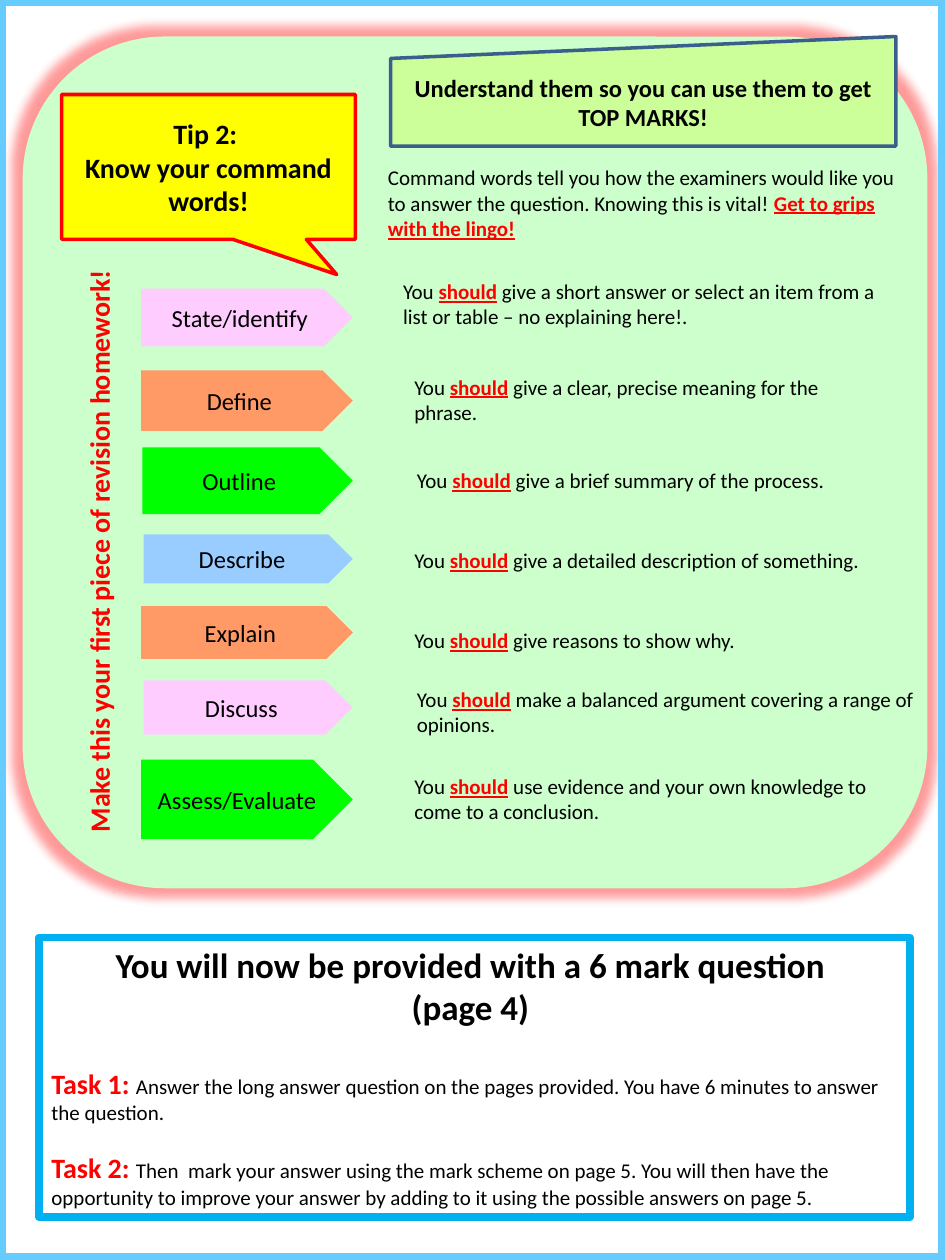
from lxml import etree
from pptx import Presentation
from pptx.dml.color import RGBColor
from pptx.enum import shapes, text
from pptx.oxml import ns
from pptx.util import Inches, Pt

KIND = shapes.MSO_SHAPE
MID, TOP = text.MSO_ANCHOR.MIDDLE, text.MSO_ANCHOR.TOP
LEFT, CENTER = text.PP_ALIGN.LEFT, text.PP_ALIGN.CENTER
BLACK, RED = "000000", "FF0000"

# word, fill, arrow box, meaning, meaning box
WORDS = [
    ("State/identify", "FFCCFF", (1.12, 2.29, 1.68, 0.46),
     "give a short answer or select an item from a list or table – no explaining here!.",
     (3.1, 2.16, 3.95, 0.5)),
    ("Define", "FF9966", (1.12, 2.94, 1.68, 0.48),
     "give a clear, precise meaning for the phrase.", (3.19, 2.92, 3.78, 0.5)),
    ("Outline", "00FF00", (1.13, 3.55, 1.67, 0.53),
     "give a brief summary of the process.", (3.21, 3.66, 3.96, 0.3)),
    ("Describe", "99CCFF", (1.14, 4.24, 1.66, 0.39),
     "give a detailed description of something.", (3.19, 4.3, 4.19, 0.3)),
    ("Explain", "FF9966", (1.12, 4.81, 1.68, 0.42),
     "give reasons to show why.", (3.19, 4.93, 4.19, 0.3)),
    ("Discuss", "FFCCFF", (1.14, 5.4, 1.66, 0.43),
     "make a balanced argument covering a range of opinions.", (3.21, 5.4, 4.19, 0.5)),
    ("Assess/Evaluate", "00FF00", (1.12, 6.03, 1.68, 0.63),
     "use evidence and your own knowledge to come to a conclusion.",
     (3.19, 6.09, 4.19, 0.5)),
]


def rgb(code):
    return RGBColor.from_string(code)


def write(item, paras, align=LEFT, anchor=TOP):
    """Fill item with paragraphs, each a list of (text, size, colour, style) runs.

    The style may hold b for bold and u for underline.
    """
    frame = item.text_frame
    frame.word_wrap = True
    frame.vertical_anchor = anchor
    for i, runs in enumerate(paras):
        para = frame.add_paragraph() if i else frame.paragraphs[0]
        para.alignment = align
        for words, size, color, style in runs:
            run = para.add_run()
            run.text = words
            font = run.font
            font.name, font.size = "Calibri", Pt(size)
            font.color.rgb = rgb(color)
            font.bold = "b" in style
            font.underline = "u" in style


def shape(slide, kind, box, fill=None, line=None, width=2, adj=()):
    item = slide.shapes.add_shape(kind, *map(Inches, box))
    item.shadow.inherit = False
    for i, value in enumerate(adj):
        item.adjustments[i] = value
    if fill:
        item.fill.solid()
        item.fill.fore_color.rgb = rgb(fill)
    else:
        item.fill.background()
    if line:
        item.line.color.rgb = rgb(line)
        item.line.width = Pt(width)
    else:
        item.line.fill.background()
    return item


def label(slide, box, runs, align=LEFT):
    item = slide.shapes.add_textbox(*map(Inches, box))
    write(item, [runs], align)
    return item


def glow(item, color, size, alpha):
    effects = item.element.spPr.find(ns.qn("a:effectLst"))
    halo = etree.SubElement(effects, ns.qn("a:glow"), rad=str(Pt(size)))
    tint = etree.SubElement(halo, ns.qn("a:srgbClr"), val=color)
    etree.SubElement(tint, ns.qn("a:alpha"), val=str(alpha * 1000))


def header(slide):
    tip = shape(slide, KIND.RECTANGULAR_CALLOUT, (0.49, 0.75, 2.33, 1.15),
                "FFFF00", RED, adj=(0.437, 0.743))
    write(tip, [[("Tip 2: ", 16, BLACK, "b")],
                [("Know your command words!", 16, BLACK, "b")]], CENTER, MID)
    label(slide, (2.98, 1.26, 4.31, 0.71), [
        ("Command words tell you how the examiners would like you to answer "
         "the question. Knowing this is vital! ", 12, BLACK, ""),
        ("Get to grips with the lingo!", 12, RED, "bu")])
    banner = shape(slide, KIND.FLOWCHART_MANUAL_INPUT, (3.1, 0.29, 4.01, 0.87),
                   "CCFF99", "3A5F8C")
    write(banner, [[("Understand them so you can use them to get TOP MARKS!",
                     14, BLACK, "b")]], CENTER, MID)
    side = label(slide, (-1.97, 4.19, 5.51, 0.37), [
        ("Make this your first piece of revision homework!", 16, RED, "b")], CENTER)
    side.rotation = 270


def command(slide, word, fill, box, meaning, place):
    arrow = shape(slide, KIND.PENTAGON, box, fill)
    write(arrow, [[(word, 14, BLACK, "")]], CENTER, MID)
    label(slide, place, [("You ", 12, BLACK, ""), ("should", 12, RED, "bu"),
                         (" " + meaning, 12, BLACK, "")])


def tasks(slide):
    panel = shape(slide, KIND.RECTANGLE, (0.31, 7.44, 6.91, 2.22),
                  line="00B0F0", width=4.5)
    write(panel, [
        [("You will now be provided with a 6 mark question ", 20, BLACK, "b")],
        [("(page 4) ", 20, BLACK, "b")],
        [("Task 1: ", 16, RED, "b"),
         ("Answer the long answer question on the pages provided. You have "
          "6 minutes to answer the question.", 12, BLACK, "")],
        [("Task 2: ", 16, RED, "b"),
         ("Then  mark your answer using the mark scheme on page 5. You will then "
          "have the opportunity to improve your answer by adding to it using the "
          "possible answers on page 5.", 12, BLACK, "")]])
    paras = panel.text_frame.paragraphs
    for para in paras[:2]:
        para.alignment = CENTER
    paras[2].space_before = Pt(22)
    paras[3].space_before = Pt(14.6)


def main():
    deck = Presentation()
    deck.slide_width, deck.slide_height = Inches(7.5), Inches(10)
    slide = deck.slides.add_slide(deck.slide_layouts[6])
    back = shape(slide, KIND.ROUNDED_RECTANGLE, (0.18, 0.29, 7.18, 6.76), "CCFFCC")
    glow(back, RED, 11, 40)
    header(slide)
    for row in WORDS:
        command(slide, *row)
    shape(slide, KIND.FRAME, (0, 0, 7.5, 10), "66CCFF", "66CCFF", adj=(0.005,))
    tasks(slide)
    deck.save("out.pptx")


if __name__ == "__main__":
    main()
